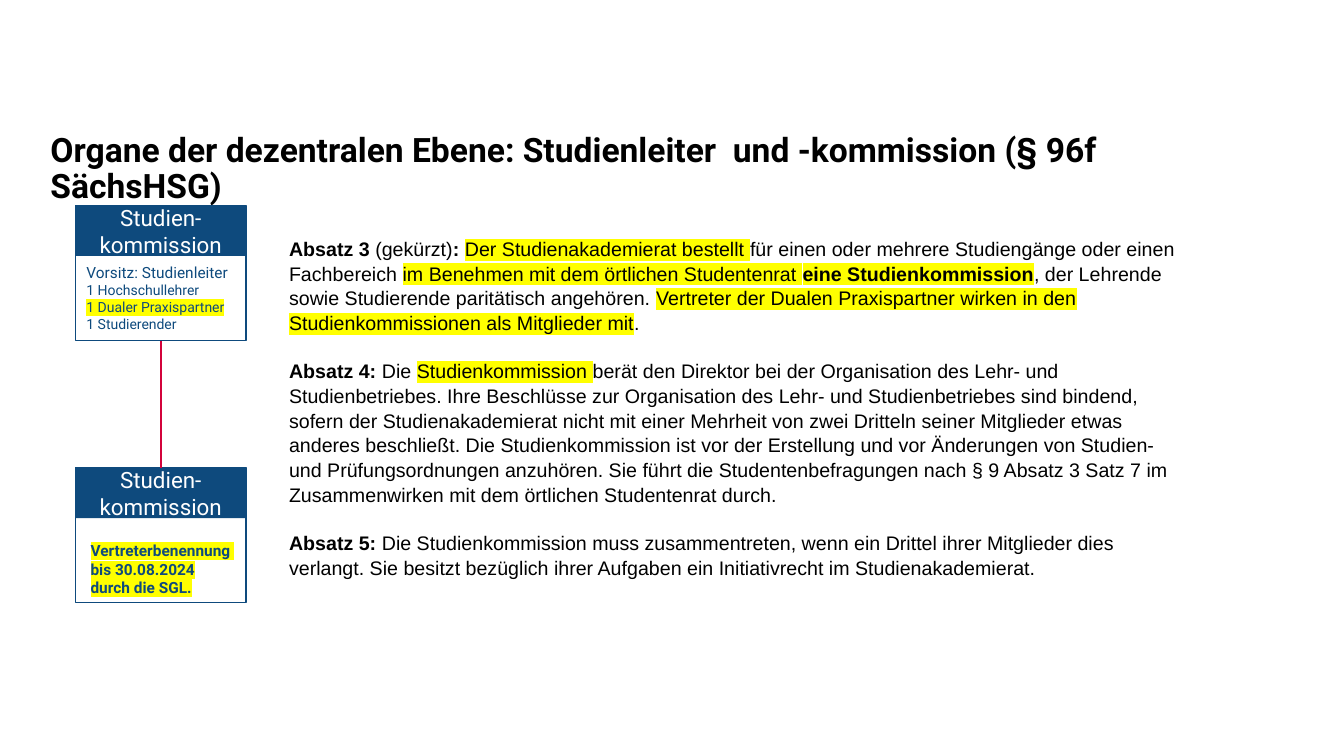
from dataclasses import dataclass

from lxml import etree
from pptx import Presentation
from pptx.dml.color import RGBColor
from pptx.enum.shapes import MSO_CONNECTOR, MSO_SHAPE
from pptx.enum.text import MSO_ANCHOR, PP_ALIGN
from pptx.oxml.ns import qn
from pptx.util import Pt

RECTANGLE = MSO_SHAPE.RECTANGLE
STRAIGHT = MSO_CONNECTOR.STRAIGHT
TOP, MIDDLE = MSO_ANCHOR.TOP, MSO_ANCHOR.MIDDLE
LEFT, CENTER = PP_ALIGN.LEFT, PP_ALIGN.CENTER
SIDE_TOP, SIDE_BOTTOM = 0, 2


@dataclass(frozen=True)
class Theme:
    navy: str = "0E4A7D"
    red: str = "D3033B"
    white: str = "FFFFFF"
    black: str = "000000"
    marker: str = "FFFF00"
    heading_font: str = "Roboto"
    body_font: str = "Arial"
    title_size: int = 24
    card_title_size: int = 16
    body_size: int = 14
    card_size: int = 11
    member_size: int = 10


THEME = Theme()

# Each span is (text, style): "b" is bold, "h" is highlighted.
PARAGRAPHS = [
    [("Absatz 3 ", "b"), ("(gekürzt)", ""), (": ", "b"),
     ("Der Studienakademierat bestellt ", "h"),
     ("für einen oder mehrere Studiengänge oder einen Fachbereich ", ""),
     ("im Benehmen mit dem örtlichen Studentenrat ", "h"),
     ("eine Studienkommission", "bh"),
     (", der Lehrende sowie Studierende paritätisch angehören. ", ""),
     ("Vertreter der Dualen Praxispartner wirken in den "
      "Studienkommissionen als Mitglieder mit", "h"), (".", "")],
    [("Absatz 4: ", "b"), ("Die ", ""), ("Studienkommission ", "h"),
     ("berät den Direktor bei der Organisation des Lehr- und Studienbetriebes. "
      "Ihre Beschlüsse zur Organisation des Lehr- und Studienbetriebes sind bindend, "
      "sofern der Studienakademierat nicht mit einer Mehrheit von zwei Dritteln seiner "
      "Mitglieder etwas anderes beschließt. Die Studienkommission ist vor der Erstellung "
      "und vor Änderungen von Studien- und Prüfungsordnungen anzuhören. Sie führt die "
      "Studentenbefragungen nach § 9 Absatz 3 Satz 7 im Zusammenwirken mit dem örtlichen "
      "Studentenrat durch.", "")],
    [("Absatz 5: ", "b"),
     ("Die Studienkommission muss zusammentreten, wenn ein Drittel ihrer Mitglieder dies "
      "verlangt. Sie besitzt bezüglich ihrer Aufgaben ein Initiativrecht im "
      "Studienakademierat.", "")],
]


def rgb(value):
    return RGBColor.from_string(value)


def add_span(para, text, style="", *, size, color, font):
    """Add a run; style may hold b (bold) and h (highlight)."""
    span = para.add_run()
    span.text = text
    span.font.size = Pt(size)
    span.font.bold = "b" in style
    span.font.color.rgb = rgb(color)
    if "h" in style:
        highlight = etree.SubElement(span.font._element, qn("a:highlight"))
        etree.SubElement(highlight, qn("a:srgbClr")).set("val", THEME.marker)
    span.font.name = font


def write(shape, paragraphs, *, size, color, font, align=LEFT, anchor=TOP,
          line_spacing=None, gap=0, top_inset=3.6):
    """Fill a shape with paragraphs, each a list of (text, style[, size])."""
    frame = shape.text_frame
    frame.word_wrap = True
    frame.vertical_anchor = anchor
    frame.margin_left = frame.margin_right = Pt(7.2)
    frame.margin_top, frame.margin_bottom = Pt(top_inset), Pt(3.6)
    for index, spans in enumerate(paragraphs):
        para = frame.add_paragraph() if index else frame.paragraphs[0]
        para.alignment = align
        if line_spacing:
            para.line_spacing = line_spacing
        if index and gap:
            para.space_before = Pt(gap)
        for text, style, *own_size in spans:
            add_span(para, text, style, size=own_size[0] if own_size else size,
                     color=color, font=font)


def add_rectangle(page, left, top, width, height, *, fill, line=None):
    box = page.shapes.add_shape(RECTANGLE, Pt(left), Pt(top), Pt(width), Pt(height))
    box.shadow.inherit = False
    box.fill.solid()
    box.fill.fore_color.rgb = rgb(fill)
    if line:
        box.line.color.rgb = rgb(line)
        box.line.width = Pt(1)
    else:
        box.line.fill.background()
    return box


def add_title(page, left, top, width, height):
    title = page.shapes.title
    title.left, title.top, title.width, title.height = map(Pt, (left, top, width, height))
    write(title, [[("Organe der dezentralen Ebene: Studienleiter  und -kommission "
                    "(§ 96f SächsHSG)", "b")]],
          size=THEME.title_size, color=THEME.black, font=THEME.heading_font,
          line_spacing=0.9)


def add_law_text(page, left, top, width, height):
    box = add_rectangle(page, left, top, width, height, fill=THEME.white)
    write(box, PARAGRAPHS, size=THEME.body_size, color=THEME.black,
          font=THEME.body_font, line_spacing=1.05, gap=16.9, top_inset=20)


def add_card(page, left, top, width, height, paragraphs, *, text_left, text_top):
    """Draw a headed card and return its frame; text offsets are from its corner."""
    frame = add_rectangle(page, left, top, width, height,
                          fill=THEME.white, line=THEME.navy)
    header = add_rectangle(page, left, top, width, 36, fill=THEME.navy)
    write(header, [[("Studien-kommission", "")]], size=THEME.card_title_size,
          color=THEME.white, font=THEME.heading_font, align=CENTER, anchor=MIDDLE)
    body = page.shapes.add_textbox(Pt(left + text_left), Pt(top + text_top),
                                   Pt(117), Pt(height - text_top))
    write(body, paragraphs, size=THEME.card_size, color=THEME.navy,
          font=THEME.heading_font)
    return frame


def join_cards(page, upper, lower):
    link = page.shapes.add_connector(STRAIGHT, 0, 0, 0, 0)
    link.begin_connect(upper, SIDE_BOTTOM)
    link.end_connect(lower, SIDE_TOP)
    link.line.color.rgb = rgb(THEME.red)
    link.line.width = Pt(1.5)
    etree.SubElement(link._element.spPr, qn("a:effectLst"))


def add_commission_cards(page, left, top, width, height):
    card_height = 96.5
    members = [[("Vorsitz: Studienleiter", "")]] + [
        [(text, style, THEME.member_size)] for text, style in
        (("1 Hochschullehrer", ""), ("1 Dualer Praxispartner", "h"), ("1 Studierender", ""))]
    deadline = [[("Vertreterbenennung  bis 30.08.2024 durch die SGL.", "bh")]]
    upper = add_card(page, left, top, width, card_height, members,
                     text_left=0.7, text_top=37.4)
    lower = add_card(page, left, top + height - card_height, width, card_height, deadline,
                     text_left=3.6, text_top=49)
    join_cards(page, upper, lower)


def main():
    deck = Presentation()
    deck.slide_width, deck.slide_height = Pt(960), Pt(540)
    page = deck.slides.add_slide(deck.slide_layouts.get_by_name("Title Only"))
    add_title(page, 28.8, 91.4, 877.7, 63.4)
    add_law_text(page, 199.4, 148.3, 660.2, 262.1)
    add_commission_cards(page, 54, 146.9, 121.7, 283.7)
    deck.save("out.pptx")


if __name__ == "__main__":
    main()
